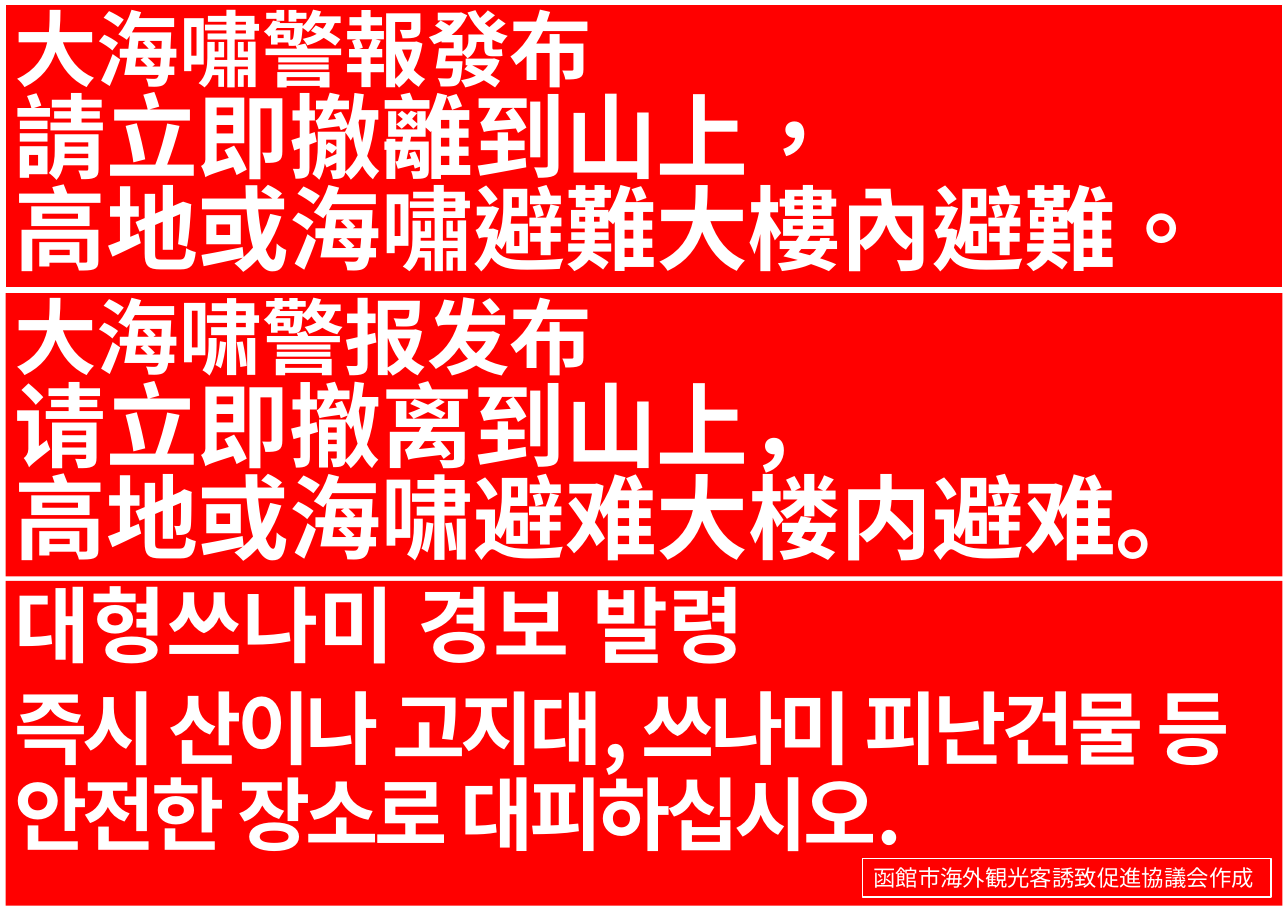
from dataclasses import dataclass
from typing import Optional

from lxml import etree
from pptx import Presentation
from pptx.dml.color import RGBColor
from pptx.enum.lang import MSO_LANGUAGE_ID
from pptx.enum.shapes import MSO_SHAPE
from pptx.enum.text import MSO_ANCHOR, MSO_AUTO_SIZE, PP_ALIGN
from pptx.oxml.ns import qn
from pptx.util import Cm, Pt

RECTANGLE = MSO_SHAPE.RECTANGLE
TOP, MIDDLE = MSO_ANCHOR.TOP, MSO_ANCHOR.MIDDLE
LEFT_ALIGN = PP_ALIGN.LEFT
NO_AUTO_SIZE = MSO_AUTO_SIZE.NONE
TRADITIONAL = MSO_LANGUAGE_ID.TRADITIONAL_CHINESE
SIMPLIFIED = MSO_LANGUAGE_ID.SIMPLIFIED_CHINESE
KOREAN = MSO_LANGUAGE_ID.KOREAN
JAPANESE = MSO_LANGUAGE_ID.JAPANESE

RED, WHITE = "FF0000", "FFFFFF"
WARNING_FONT, CREDIT_FONT = "Noto Sans CJK JP", "Calibri"
PANEL_LEFT, PANEL_WIDTH = 0.13, 29.44


@dataclass
class WarningPanel:
    top: float
    height: float
    language: MSO_LANGUAGE_ID
    heading: str
    instructions: list[str]
    size: float = 60
    line_spacing: float | Pt = Pt(50)
    tracking: int = 0
    line: Optional[str] = None


PANELS = [
    WarningPanel(13.39, 7.49, KOREAN, "대형쓰나미 경보 발령",
                 ["즉시 산이나 고지대, 쓰나미 피난건물 등 안전한 장소로 대피하십시오."],
                 size=52, line_spacing=0.9, tracking=-3),
    WarningPanel(0.1, 6.53, TRADITIONAL, "大海嘯警報發布",
                 ["請立即撤離到山上，", "高地或海嘯避難大樓內避難。"], line=WHITE),
    WarningPanel(6.76, 6.53, SIMPLIFIED, "大海啸警报发布",
                 ["请立即撤离到山上，", "高地或海啸避难大楼内避难。"]),
]


def color(value: str) -> RGBColor:
    return RGBColor.from_string(value)


def add_box(slide, left: float, top: float, width: float, height: float,
            fill: Optional[str] = None, line: Optional[str] = None,
            inset: tuple[float, float] = (0.2, 0.1),
            anchor: MSO_ANCHOR = TOP):
    """Draw a rectangle and return its text frame."""
    shape = slide.shapes.add_shape(RECTANGLE, Cm(left), Cm(top), Cm(width), Cm(height))
    shape.shadow.inherit = False
    if fill:
        shape.fill.solid()
        shape.fill.fore_color.rgb = color(fill)
    else:
        shape.fill.background()
    if line:
        shape.line.color.rgb = color(line)
        shape.line.width = Pt(0.75)
    else:
        shape.line.fill.background()
    frame = shape.text_frame
    frame.word_wrap = True
    frame.auto_size = NO_AUTO_SIZE
    frame.vertical_anchor = anchor
    frame.margin_left = frame.margin_right = Cm(inset[0])
    frame.margin_top = frame.margin_bottom = Cm(inset[1])
    return frame


def write_text(paragraph, text: str, *, size: float, font: str,
               language: MSO_LANGUAGE_ID, bold: bool = False,
               line_spacing: float | Pt = 1.0, space_before: float = 0,
               tracking: int = 0) -> None:
    paragraph.alignment = LEFT_ALIGN
    paragraph.line_spacing = line_spacing
    paragraph.space_before = Pt(space_before)
    run = paragraph.add_run()
    run.text = text
    run.font.size = Pt(size)
    run.font.bold = bold
    run.font.color.rgb = color(WHITE)
    run.font.name = font
    run.font.language_id = language
    # East Asian typeface and letter spacing
    properties = run._r.get_or_add_rPr()
    etree.SubElement(properties, qn("a:ea")).set("typeface", font)
    if tracking:
        properties.set("spc", str(tracking * 100))


def add_warning(slide, panel: WarningPanel) -> None:
    frame = add_box(slide, PANEL_LEFT, panel.top, PANEL_WIDTH, panel.height,
                    fill=RED, line=panel.line)
    write_text(frame.paragraphs[0], panel.heading, size=54, font=WARNING_FONT,
               language=panel.language, bold=True, line_spacing=0.9)
    for instruction in panel.instructions:
        write_text(frame.add_paragraph(), instruction, size=panel.size,
                   font=WARNING_FONT, language=panel.language, bold=True,
                   line_spacing=panel.line_spacing, space_before=10,
                   tracking=panel.tracking)


def main() -> None:
    presentation = Presentation()
    presentation.slide_width, presentation.slide_height = Cm(29.7), Cm(21)
    slide = presentation.slides.add_slide(presentation.slide_layouts[6])

    # Warning in three languages
    for panel in PANELS:
        add_warning(slide, panel)

    # Author credit
    credit = add_box(slide, 19.89, 19.79, 9.42, 0.89, line=WHITE,
                     inset=(0.25, 0.13), anchor=MIDDLE)
    write_text(credit.paragraphs[0], "函館市海外観光客誘致促進協議会作成",
               size=14.6, font=CREDIT_FONT, language=JAPANESE)

    presentation.save("out.pptx")


if __name__ == "__main__":
    main()
